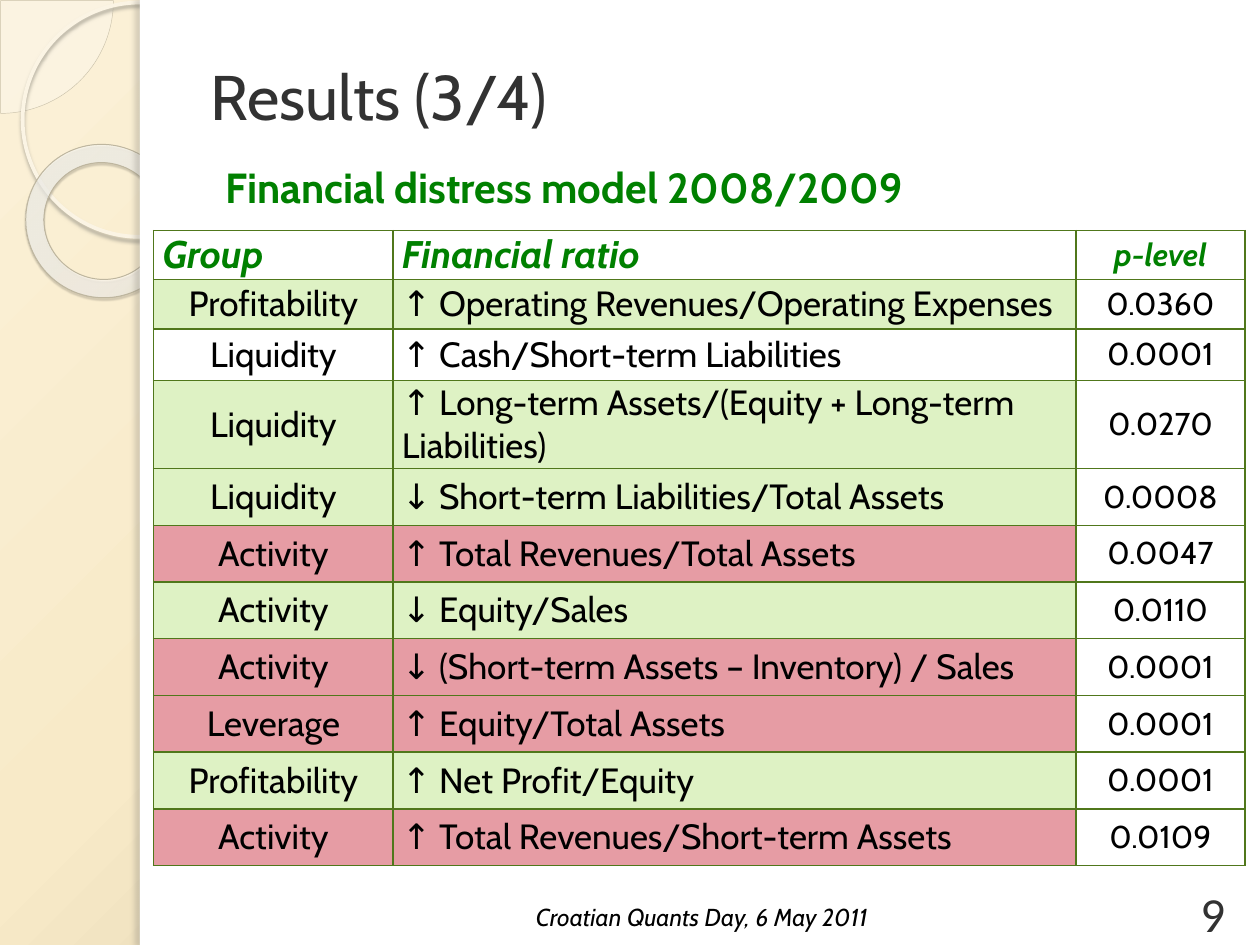
from lxml.etree import fromstring
from pptx import Presentation
from pptx.dml.color import RGBColor
from pptx.enum.shapes import MSO_SHAPE
from pptx.enum.text import MSO_ANCHOR, PP_ALIGN
from pptx.util import Inches, Pt

theme = {
    "green": "DEF2C4", "red": "E69CA4", "edge": "50771B", "white": "FFFFFF",
    "title": ({"name": "Cabin", "size": Pt(36)}, "323232"),
    "lead": ({"name": "Cabin", "size": Pt(24), "bold": True}, "008000"),
    "head": ({"name": "Cabin", "size": Pt(22), "bold": True, "italic": True}, "008000"),
    "level": ({"name": "Cabin", "size": Pt(18), "bold": True, "italic": True}, "008000"),
    "cell": ({"name": "Cabin", "size": Pt(20), "bold": False}, "000000"),
    "value": ({"name": "Cabin", "size": Pt(18), "bold": False}, "000000"),
    "page": ({"name": "Calibri", "size": Pt(28)}, "323232"),
    "foot": ({"name": "Cabin", "size": Pt(14), "italic": True}, "000000"),
    "back": [(0, "FBF1D8", 100), (40, "F8EAC8", 100), (100, "BDB193", 100)],
    "ring": [(0, "FDFCF8", 70), (70, "FFFEFB", 55), (100, "DECDA3", 60)],
}


def write(frame, text, look, align=PP_ALIGN.LEFT):
    line = frame.paragraphs[0]
    line.alignment = align
    run = line.add_run()
    run.text = text
    form, color = theme[look]
    for key, value in form.items():
        setattr(run.font, key, value)
    run.font.color.rgb = RGBColor.from_string(color)


def node(tag, body):
    space = "http://schemas.openxmlformats.org/drawingml/2006/main"
    return fromstring(f'<a:{tag} xmlns:a="{space}">{body}</a:{tag.split()[0]}>')


deck = Presentation()
deck.slide_width, deck.slide_height = Inches(10), Inches(7.5)
slide = deck.slides.add_slide(deck.slide_layouts[5])
shapes = slide.shapes

parts = [
    (MSO_SHAPE.PIE, (-0.89, -0.89, 1.79, 1.79), (0, 54.02), 0,
     ("FCFAF6", 33), ("CAC2AB", 0.25), None),
    (MSO_SHAPE.OVAL, (0.18, 0.02, 1.86, 1.86), (), 0,
     None, ("FBF4E4", 2.15), ("ABA697", 85, 2, 2, 90)),
    (MSO_SHAPE.DONUT, (0.2, 1.15, 1.23, 1.21), (0.12,), 38.6,
     ("FFFEFB", 100), ("BEB69F", 0.58), ("575349", 35, 1, 1.2, 75)),
    (MSO_SHAPE.RECTANGLE, (1.11, 0, 8.89, 7.5), (), 0,
     (theme["white"], 100), None, None),
    (MSO_SHAPE.RECTANGLE, (1.11, 0, 0.08, 7.5), (), 0,
     (theme["white"], 100), None, ("716E67", 25, 3, 3, 180)),
]
made = []
for kind, box, bends, turn, fill, line, shade in parts:
    shape = shapes.add_shape(kind, *map(Inches, box))
    made.append(shape)
    shape.rotation = turn
    shape.shadow.inherit = False
    for spot, bend in enumerate(bends):
        shape.adjustments[spot] = bend
    if fill:
        shape.fill.solid()
        shape.fill.fore_color.rgb = RGBColor.from_string(fill[0])
        tint = shape.fill._xPr.find(".//{*}solidFill/{*}srgbClr")
        tint.append(node(f'alpha val="{fill[1] * 1000}"', ""))
    else:
        shape.fill.background()
    if line:
        shape.line.color.rgb = RGBColor.from_string(line[0])
        shape.line.width = Pt(line[1])
    else:
        shape.line.fill.background()
    if shade:
        color, alpha, blur, gap, way = shade
        shape._element.spPr.find("{*}effectLst").append(node(
            f'outerShdw blurRad="{Pt(blur)}" dist="{Pt(gap)}" dir="{way * 60000}" rotWithShape="0"',
            f'<a:srgbClr val="{color}"><a:alpha val="{alpha * 1000}"/></a:srgbClr>'))

slide.background.fill.solid()
for base, stops, rect in [
    (slide.background.fill._xPr, theme["back"], (51, -20, 200, 120)),
    (made[2]._element.spPr, theme["ring"], (85, 100, 1000, 300)),
]:
    list_xml = "".join(
        f'<a:gs pos="{pos * 1000}"><a:srgbClr val="{color}"><a:alpha val="{alpha * 1000}"/></a:srgbClr></a:gs>'
        for pos, color, alpha in stops)
    sides = " ".join(f'{side}="{size * 1000}"' for side, size in zip("ltrb", rect))
    old = base.find("{*}solidFill")
    base.replace(old, node(
        'gradFill rotWithShape="1"',
        f'<a:gsLst>{list_xml}</a:gsLst><a:path path="circle"><a:fillToRect {sides}/></a:path>'))

title = shapes.title
for key, value in zip(("left", "top", "width", "height"), (1.57, 0.13, 8.2, 1.25)):
    setattr(title, key, Inches(value))
title.text_frame.vertical_anchor = MSO_ANCHOR.MIDDLE
write(title.text_frame, "Results (3/4)", "title")
shapes._spTree.append(title._element)

for text, box, look, align, wrap, anchor in [
    ("Financial distress model 2008/2009", (1.69, 1.23, 5.81, 0.5), "lead",
     PP_ALIGN.LEFT, False, MSO_ANCHOR.TOP),
    ("9", (9.29, 7.01, 0.67, 0.52), "page", PP_ALIGN.CENTER, True, MSO_ANCHOR.BOTTOM),
    ("Croatian Quants Day, 6 May 2011", (1.14, 7.11, 8.86, 0.34), "foot",
     PP_ALIGN.CENTER, True, MSO_ANCHOR.TOP),
]:
    frame = shapes.add_textbox(*map(Inches, box)).text_frame
    frame.word_wrap = wrap
    frame.vertical_anchor = anchor
    write(frame, text, look, align)

rows = [
    ("Group", "Financial ratio", "p-level", None),
    ("Profitability", "↑ Operating Revenues/Operating Expenses", "0.0360", "green"),
    ("Liquidity", "↑ Cash/Short-term Liabilities", "0.0001", None),
    ("Liquidity", "↑ Long-term Assets/(Equity + Long-term Liabilities)", "0.0270", "green"),
    ("Liquidity", "↓ Short-term Liabilities/Total Assets", "0.0008", "green"),
    ("Activity", "↑ Total Revenues/Total Assets", "0.0047", "red"),
    ("Activity", "↓ Equity/Sales", "0.0110", "green"),
    ("Activity", "↓ (Short-term Assets – Inventory) / Sales", "0.0001", "red"),
    ("Leverage", "↑ Equity/Total Assets", "0.0001", "red"),
    ("Profitability", "↑ Net Profit/Equity", "0.0001", "green"),
    ("Activity", "↑ Total Revenues/Short-term Assets", "0.0109", "red"),
]
wide = (1.9, 5.42, 1.34)
high = [0.39, 0.39, 0.41, 0.7] + [0.45] * 7
grid = shapes.add_table(len(rows), len(wide), Inches(1.22), Inches(1.83),
                        Inches(sum(wide)), Inches(sum(high))).table
grid.first_row = grid.horz_banding = False
for col, size in zip(grid.columns, wide):
    col.width = Inches(size)
form = {
    "margin_left": Inches(0.07), "margin_right": Inches(0.07),
    "margin_top": 0, "margin_bottom": 0, "vertical_anchor": MSO_ANCHOR.MIDDLE,
}
for y, (*texts, hue) in enumerate(rows):
    grid.rows[y].height = Inches(high[y])
    looks = ("cell", "cell", "value") if y else ("head", "head", "level")
    for x, (text, look) in enumerate(zip(texts, looks)):
        cell = grid.cell(y, x)
        for key, value in form.items():
            setattr(cell, key, value)
        mid = x == 2 or (x == 0 and y > 0)
        write(cell.text_frame, text, look, PP_ALIGN.CENTER if mid else PP_ALIGN.LEFT)
        if hue and x < 2:
            cell.fill.solid()
            cell.fill.fore_color.rgb = RGBColor.from_string(theme[hue])
        else:
            cell.fill.background()
        for spot, side in enumerate("LRTB"):
            cell._tc.tcPr.insert(spot, node(
                f'ln{side} w="{Pt(1)}"',
                f'<a:solidFill><a:srgbClr val="{theme["edge"]}"/></a:solidFill>'))

deck.save("out.pptx")
